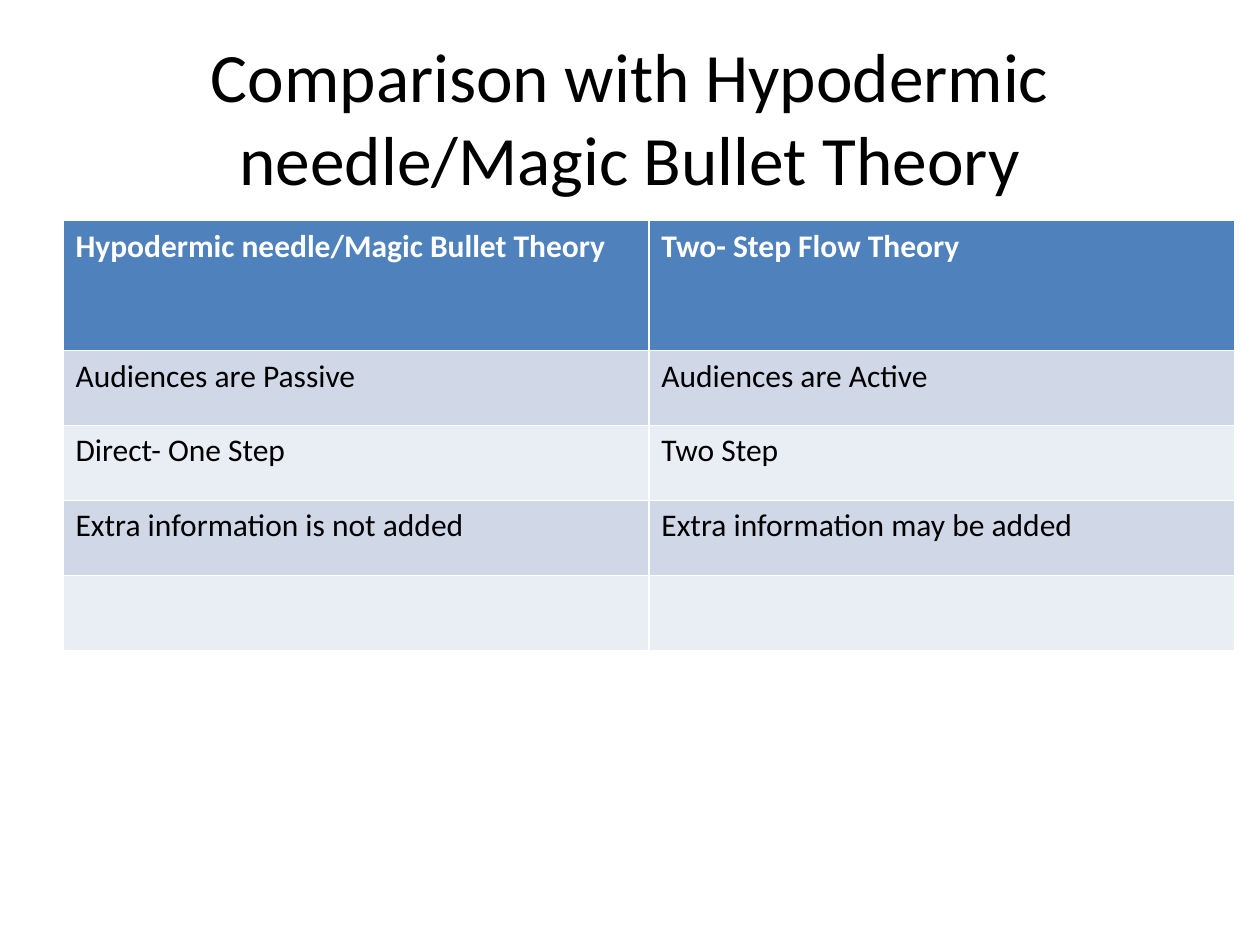
from pptx import Presentation
from pptx.dml.color import RGBColor
from pptx.enum import text
from pptx.util import Cm, Pt

FONT = "Calibri"
BLACK = RGBColor(0x00, 0x00, 0x00)
WHITE = RGBColor(0xFF, 0xFF, 0xFF)
HEADER_BLUE = RGBColor(0x4F, 0x81, 0xBD)
BANDS = (RGBColor(0xD0, 0xD8, 0xE8), RGBColor(0xE9, 0xED, 0xF4))

THEORIES = [
    ("Hypodermic needle/Magic Bullet Theory", "Two- Step Flow Theory"),
    ("Audiences are Passive", "Audiences are Active"),
    ("Direct- One Step", "Two Step"),
    ("Extra information is not added", "Extra information may be added"),
    ("", ""),
]


def style_font(font, size, color, bold=False):
    font.name = FONT
    font.size = Pt(size)
    font.bold = bold
    font.color.rgb = color


def add_title(page, left, top, width, height):
    frame = page.shapes.add_textbox(left, top, width, height).text_frame
    frame.word_wrap = True
    frame.vertical_anchor = text.MSO_ANCHOR.MIDDLE
    para = frame.paragraphs[0]
    para.text = "Comparison with Hypodermic needle/Magic Bullet Theory"
    para.alignment = text.PP_ALIGN.CENTER
    style_font(para.font, 39.6, BLACK)


def add_comparison(page, left, top, width, header_height, row_height):
    """Add the theory table; the default table style draws its white rules."""
    height = header_height + row_height * (len(THEORIES) - 1)
    table = page.shapes.add_table(
        len(THEORIES), len(THEORIES[0]), left, top, width, height).table
    for index, wording in enumerate(THEORIES):
        is_header = index == 0
        table.rows[index].height = header_height if is_header else row_height
        for column, words in enumerate(wording):
            cell = table.cell(index, column)
            cell.fill.solid()
            cell.fill.fore_color.rgb = (
                HEADER_BLUE if is_header else BANDS[(index - 1) % 2])
            para = cell.text_frame.paragraphs[0]
            if words:
                para.text = words
            style_font(para.font, 18, WHITE if is_header else BLACK, is_header)


def main():
    deck = Presentation()
    deck.slide_width, deck.slide_height = Cm(25.4), Cm(19.05)
    page = deck.slides.add_slide(deck.slide_layouts[6])
    add_title(page, Cm(1.27), Cm(0.76), Cm(22.86), Cm(3.18))
    add_comparison(page, Cm(1.27), Cm(4.45), Cm(23.62), Cm(2.62), Cm(1.51))
    deck.save("out.pptx")


if __name__ == "__main__":
    main()
